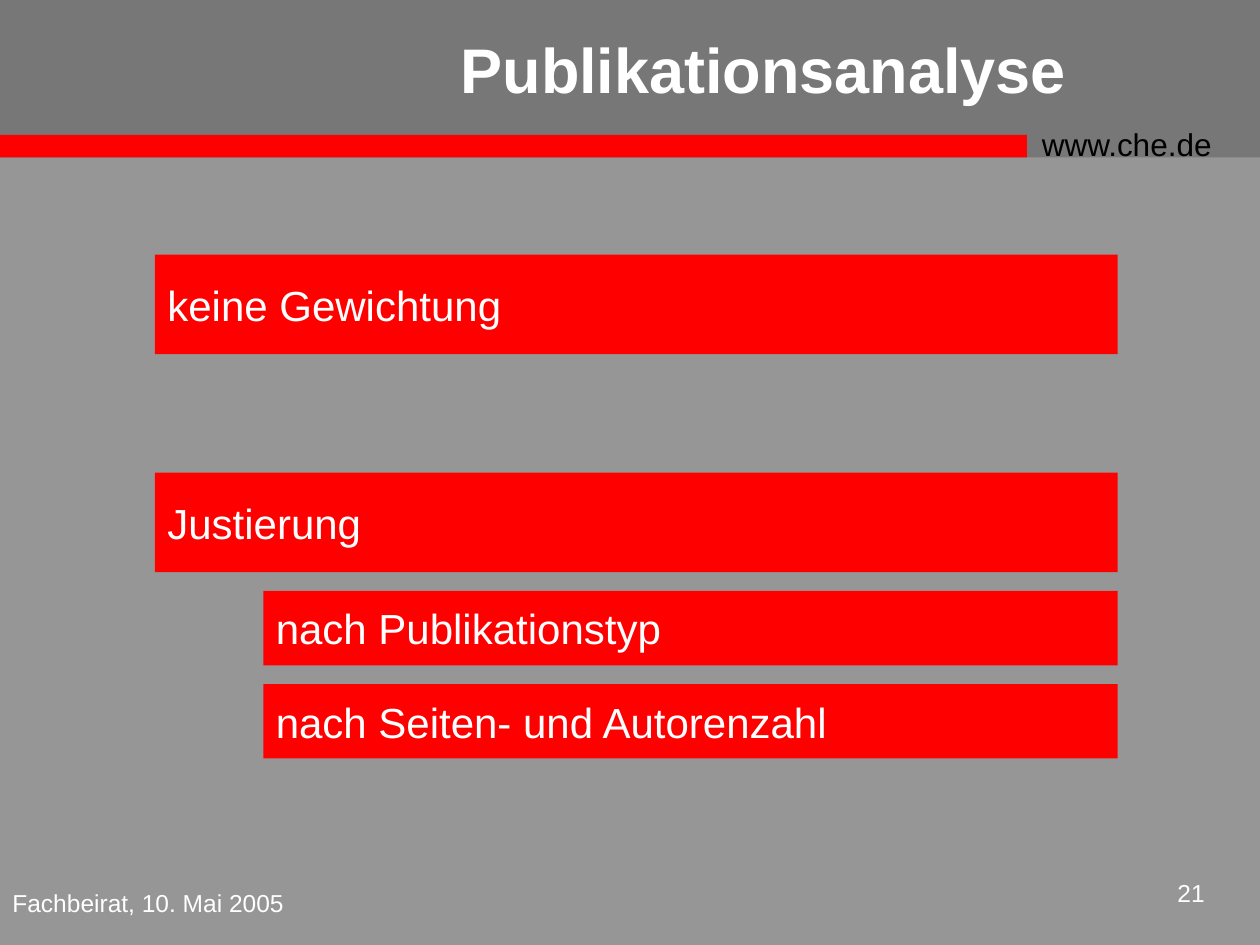
from pptx import Presentation
from pptx.dml.color import RGBColor
from pptx.enum.shapes import MSO_SHAPE
from pptx.enum.text import MSO_ANCHOR, PP_ALIGN
from pptx.util import Inches, Pt

BACKGROUND = RGBColor(0x96, 0x96, 0x96)
HEADER_GRAY = RGBColor(0x77, 0x77, 0x77)
RED = RGBColor(0xFF, 0x00, 0x00)
WHITE = RGBColor(0xFF, 0xFF, 0xFF)
BLACK = RGBColor(0x00, 0x00, 0x00)
FONT = "Arial"


def write(frame, text, size=24, color=WHITE, bold=False,
          align=PP_ALIGN.LEFT, anchor=MSO_ANCHOR.TOP, wrap=True):
    frame.word_wrap = wrap
    frame.vertical_anchor = anchor
    paragraph = frame.paragraphs[0]
    paragraph.alignment = align
    run = paragraph.add_run()
    run.text = text
    run.font.name = FONT
    run.font.size = Pt(size)
    run.font.bold = bold
    run.font.color.rgb = color


class SlideBuilder:
    def __init__(self, slide):
        self.slide = slide
        slide.background.fill.solid()
        slide.background.fill.fore_color.rgb = BACKGROUND

    def band(self, left, top, width, height, color=RED):
        band = self.slide.shapes.add_shape(
            MSO_SHAPE.RECTANGLE, Inches(left), Inches(top), Inches(width), Inches(height))
        band.shadow.inherit = False
        band.fill.solid()
        band.fill.fore_color.rgb = color
        band.line.fill.background()
        return band

    def bar(self, text, left, top, height):
        bar = self.band(left, top, BAR_RIGHT - left, height)
        write(bar.text_frame, text, anchor=MSO_ANCHOR.MIDDLE, wrap=False)

    def label(self, text, left, top, width, height, **style):
        label = self.slide.shapes.add_textbox(
            Inches(left), Inches(top), Inches(width), Inches(height))
        write(label.text_frame, text, **style)


BAR_RIGHT = 8.87
MAIN_LEFT, MAIN_HEIGHT = 1.23, 0.79
SUB_LEFT, SUB_HEIGHT = 2.09, 0.59
GAP = 0.15
ADJUSTMENT_TOP = 3.75


def main():
    presentation = Presentation()
    presentation.slide_width = Inches(10)
    presentation.slide_height = Inches(7.5)
    builder = SlideBuilder(presentation.slides.add_slide(presentation.slide_layouts[6]))

    # Header
    builder.band(0, 0, 10, 1.25, HEADER_GRAY)
    builder.band(0, 1.07, 8.15, 0.18)
    builder.label("www.che.de", 8.17, 0.94, 1.75, 0.4, size=18, color=BLACK)
    builder.label("Publikationsanalyse", 2.48, 0, 7.16, 1.08, size=36, bold=True,
                  align=PP_ALIGN.CENTER, anchor=MSO_ANCHOR.MIDDLE)

    # Main statements
    builder.bar("keine Gewichtung", MAIN_LEFT, 2.02, MAIN_HEIGHT)
    builder.bar("Justierung", MAIN_LEFT, ADJUSTMENT_TOP, MAIN_HEIGHT)

    # Kinds of adjustment
    first_top = ADJUSTMENT_TOP + MAIN_HEIGHT + GAP
    for row, criterion in enumerate(["nach Publikationstyp", "nach Seiten- und Autorenzahl"]):
        builder.bar(criterion, SUB_LEFT, first_top + row * (SUB_HEIGHT + GAP), SUB_HEIGHT)

    # Footer
    builder.label("Fachbeirat, 10. Mai 2005", 0, 7, 2.4, 0.5, size=14)
    builder.label("21", 9.08, 6.92, 0.58, 0.42, size=14, align=PP_ALIGN.RIGHT)

    presentation.save("out.pptx")


if __name__ == "__main__":
    main()
